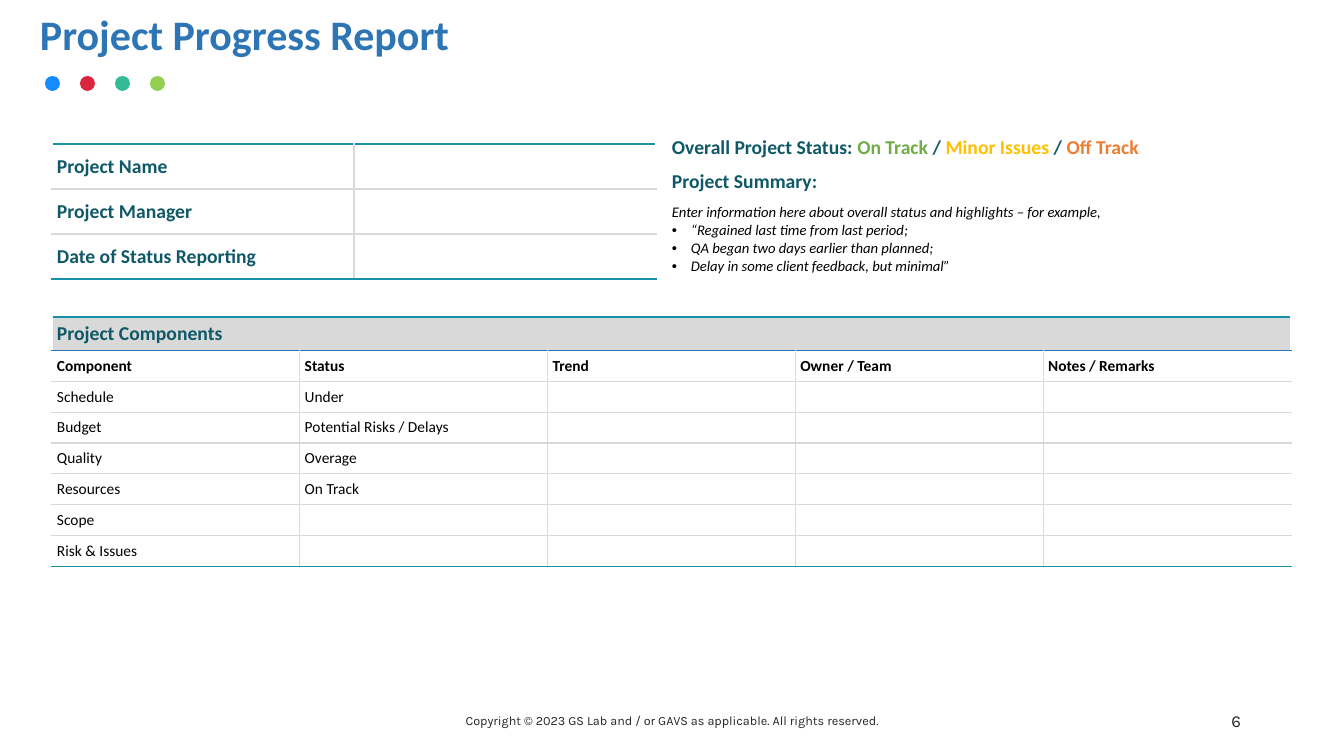
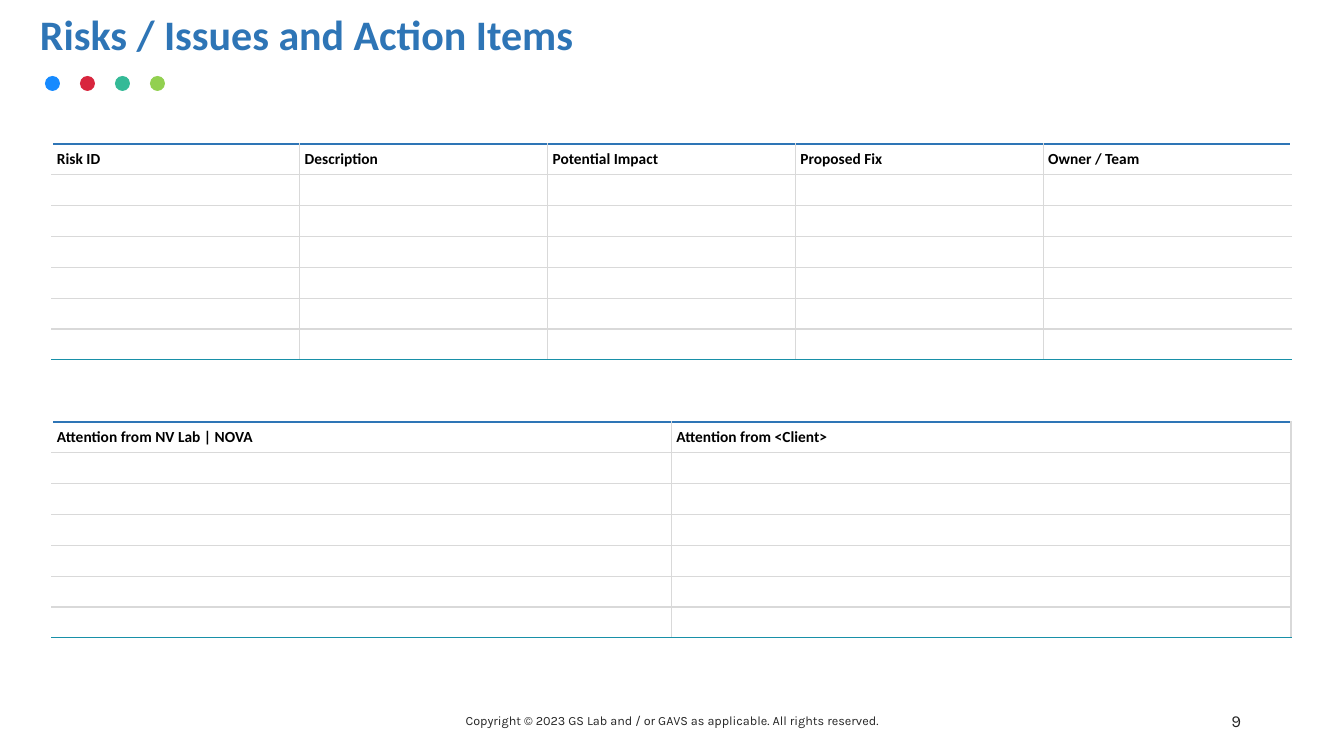
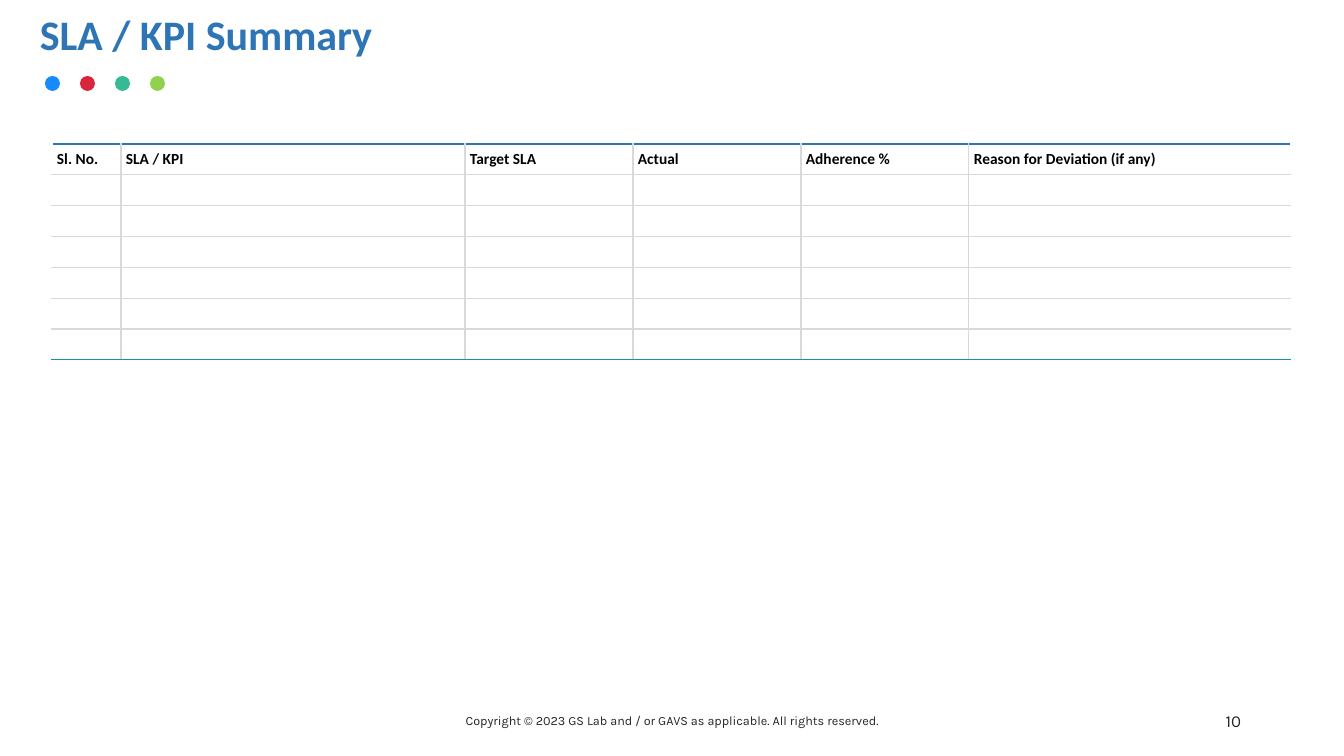
"""Build three project status report slides: progress, risks and SLA summary."""
from dataclasses import dataclass

from lxml import etree
from pptx import Presentation, util as u
from pptx.dml.color import RGBColor
from pptx.enum import shapes, text
from pptx.oxml import ns

PX = 12192000 / 1344


@dataclass(frozen=True)
class Theme:
    font: str = "Calibri"
    footer_font: str = "Karla"
    blue: str = "2E75B6"
    teal: str = "1890A8"
    label: str = "0F5867"
    ink: str = "000000"
    footer: str = "262626"
    gray: str = "D9D9D9"
    white: str = "FFFFFF"
    on_track: str = "70AD47"
    minor: str = "FFC000"
    off_track: str = "ED7D31"
    dots: tuple = ("168AFF", "D8263E", "34BA97", "92D050")
    title_pt: float = 30
    label_pt: float = 14
    page_pt: float = 12
    body_pt: float = 11
    note_pt: float = 10.5
    footer_pt: float = 9


T = Theme()
LABEL = (T.label_pt, T.label, True)
HEAD = (T.body_pt, T.ink, True)
BODY = (T.body_pt, T.ink, False)
LEFT, TOP, WIDTH = 52, 144, 1239


def put(p, words, style, italic=False, font=T.font):
    size, color, bold = style
    r = p.add_run()
    r.text = words
    r.font.name, r.font.size = font, u.Pt(size)
    r.font.bold, r.font.italic = bold, italic
    r.font.color.rgb = RGBColor.from_string(color)


def grid(s, x, y, cols, heights, rows, tops=(), right=T.white):
    last_row, last_col = len(rows) - 1, len(cols) - 1
    box = [round(v * PX) for v in (x, y, sum(cols), sum(heights))]
    tbl = s.shapes.add_table(len(rows), len(cols), *box).table
    tbl.first_row = tbl.horz_banding = False
    for col, width in zip(tbl.columns, cols):
        col.width = round(width * PX)
    for i, (style, words) in enumerate(rows):
        tbl.rows[i].height = round(heights[i] * PX)
        band = len(words) == 1 and last_col > 0
        if band:
            tbl.cell(i, 0).merge(tbl.cell(i, last_col))
        inner = T.white if band else T.gray
        above = tops[i] if i < len(tops) else T.gray
        below = tops[i + 1] if i + 1 < len(tops) else T.gray
        for j in range(last_col + 1):
            cell = tbl.cell(i, j)
            cell.margin_left = cell.margin_right = round(5 * PX)
            cell.margin_top = cell.margin_bottom = round(5 * PX)
            cell.vertical_anchor = text.MSO_ANCHOR.MIDDLE
            edges = {
                "a:lnL": inner if j else T.white,
                "a:lnR": right if j == last_col else inner,
                "a:lnT": above,
                "a:lnB": T.teal if i == last_row else below,
            }
            for tag, color in edges.items() if tops else ():
                ln = etree.SubElement(cell._tc.get_or_add_tcPr(), ns.qn(tag), w=str(u.Pt(1)))
                fill = etree.SubElement(ln, ns.qn("a:solidFill"))
                etree.SubElement(fill, ns.qn("a:srgbClr"), val=color)
            if band:
                cell.fill.solid()
                cell.fill.fore_color.rgb = RGBColor.from_string(T.gray)
            else:
                cell.fill.background()
            p = cell.text_frame.paragraphs[0]
            if j < len(words) and words[j]:
                put(p, words[j], style)
            else:
                etree.SubElement(p._p, ns.qn("a:endParaRPr"), sz=str(round(style[0] * 100)))
    return tbl


prs = Presentation()
prs.slide_width, prs.slide_height = round(1344 * PX), round(756 * PX)

slides = []
for title, page in (
    ("Project Progress Report", "6"),
    ("Risks / Issues and Action Items", "9"),
    ("SLA / KPI Summary", "10"),
):
    s = prs.slides.add_slide(prs.slide_layouts[6])
    slides.append(s)
    for n, color in enumerate(T.dots):
        box = [round(v * PX) for v in (45 + 35 * n, 76, 15, 15)]
        sp = s.shapes.add_shape(shapes.MSO_SHAPE.OVAL, *box)
        sp.shadow.inherit = False
        sp.fill.solid()
        sp.fill.fore_color.rgb = RGBColor.from_string(color)
        sp.line.fill.background()
    notice = "Copyright © 2023 GS Lab and / or GAVS as applicable. All rights reserved."
    for words, box, style, font, align, anchor in (
        (title, (30, 9, 1159, 56), (T.title_pt, T.blue, True), T.font,
         text.PP_ALIGN.LEFT, text.MSO_ANCHOR.TOP),
        (notice, (445, 701, 454, 40), (T.footer_pt, T.footer, False), T.footer_font,
         text.PP_ALIGN.CENTER, text.MSO_ANCHOR.MIDDLE),
        (page, (949, 701, 302, 40), (T.page_pt, T.footer, False), T.footer_font,
         text.PP_ALIGN.RIGHT, text.MSO_ANCHOR.MIDDLE),
    ):
        tf = s.shapes.add_textbox(*[round(v * PX) for v in box]).text_frame
        tf.word_wrap = True
        tf.vertical_anchor = anchor
        p = tf.paragraphs[0]
        p.alignment = align
        if words == title:
            p.line_spacing = 0.9
        put(p, words, style, font=font)

progress, risks, sla = slides
even_rows = [216 / 7] * 7
fifths = [WIDTH / 5] * 5
blank_rows = [(BODY, [])] * 6

fields = ("Project Name", "Project Manager", "Date of Status Reporting")
grid(progress, LEFT, TOP, [302] * 2, [45] * 3, [(LABEL, [f]) for f in ()] or
     [(LABEL, [f, ""]) for f in fields], [T.teal])

status = grid(progress, 667, 131, [624], [34, 34, 80],
              [(LABEL, []), (LABEL, ["Project Summary:"]), (BODY, [])])
p = status.cell(0, 0).text_frame.paragraphs[0]
for words, color in (
    ("Overall Project Status: ", T.label),
    ("On Track", T.on_track),
    (" / ", T.label),
    ("Minor Issues", T.minor),
    (" / ", T.label),
    ("Off Track", T.off_track),
):
    put(p, words, (T.label_pt, color, True))

tf = status.cell(2, 0).text_frame
note = (T.note_pt, T.ink, False)
put(tf.paragraphs[0], "Enter information here about overall status and highlights – for example,",
    note, italic=True)
for words in (
    "“Regained last time from last period;",
    "QA began two days earlier than planned;",
    "Delay in some client feedback, but minimal”",
):
    p = tf.add_paragraph()
    pPr = p._p.get_or_add_pPr()
    pPr.set("marL", str(round(19 * PX)))
    pPr.set("indent", str(round(-19 * PX)))
    color = etree.SubElement(pPr, ns.qn("a:buClr"))
    etree.SubElement(color, ns.qn("a:srgbClr"), val=T.ink)
    etree.SubElement(pPr, ns.qn("a:buFont"), typeface="Arial")
    etree.SubElement(pPr, ns.qn("a:buChar"), char="•")
    put(p, words, note, italic=True)

components = (
    ("Schedule", "Under"),
    ("Budget", "Potential Risks / Delays"),
    ("Quality", "Overage"),
    ("Resources", "On Track"),
    ("Scope", ""),
    ("Risk & Issues", ""),
)
grid(progress, LEFT, 317, fifths, [33] + even_rows,
     [(LABEL, ["Project Components"]),
      (HEAD, ["Component", "Status", "Trend", "Owner / Team", "Notes / Remarks"])]
     + [(BODY, c) for c in components], [T.teal, T.blue])

grid(risks, LEFT, TOP, fifths, even_rows,
     [(HEAD, ["Risk ID", "Description", "Potential Impact", "Proposed Fix", "Owner / Team"])]
     + blank_rows, [T.blue])
grid(risks, LEFT, 422, [WIDTH / 2] * 2, even_rows,
     [(HEAD, ["Attention from NV Lab | NOVA", "Attention from <Client>"])]
     + blank_rows, [T.blue], right=T.gray)

grid(sla, LEFT, TOP, [69, 344, 168, 168, 168, 322], even_rows,
     [(HEAD, ["Sl. No.", "SLA / KPI", "Target SLA", "Actual", "Adherence %",
              "Reason for Deviation (if any)"])]
     + blank_rows, [T.blue])

prs.save("out.pptx")
